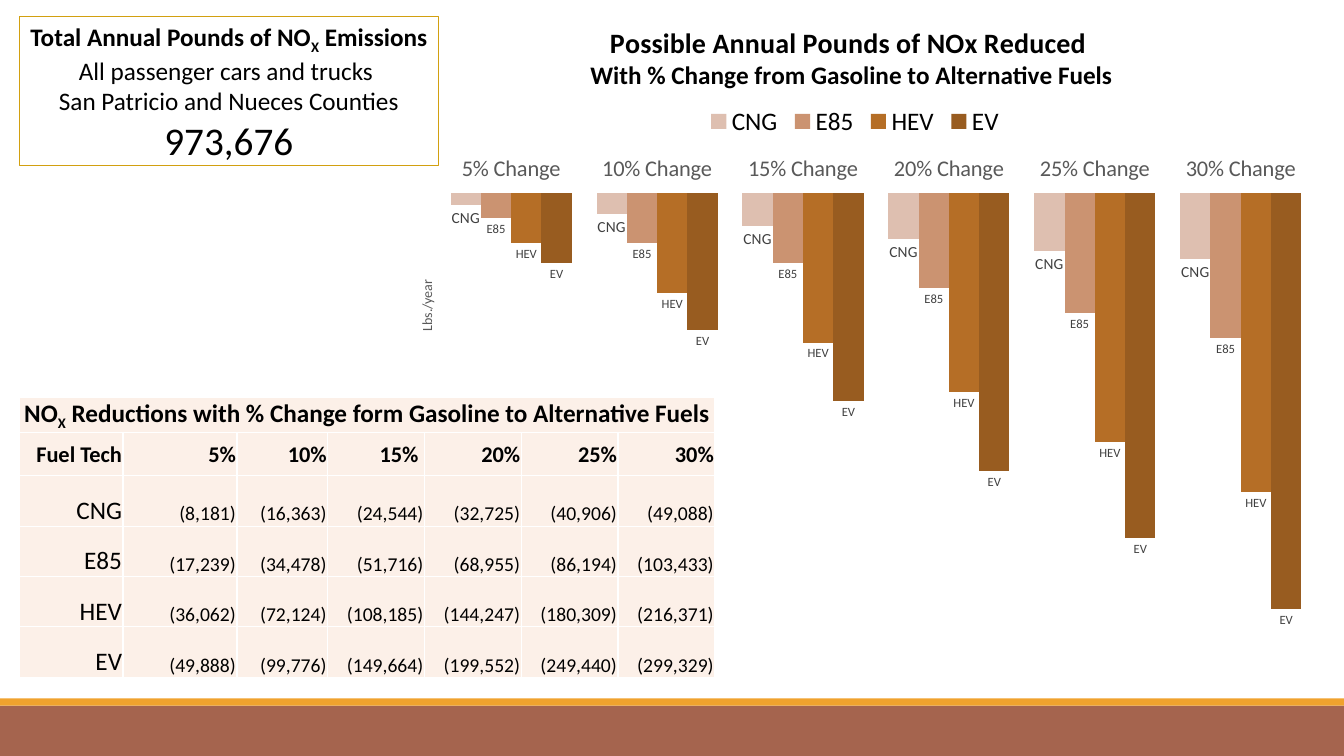
from pptx import Presentation
from pptx.chart.data import CategoryChartData
from pptx.dml.color import RGBColor
from pptx.enum.chart import (XL_CHART_TYPE, XL_LABEL_POSITION, XL_LEGEND_POSITION,
                             XL_TICK_LABEL_POSITION, XL_TICK_MARK)
from pptx.enum.shapes import MSO_SHAPE
from pptx.enum.text import MSO_ANCHOR, PP_ALIGN
from pptx.oxml import parse_xml
from pptx.oxml.ns import nsdecls, qn
from pptx.util import Inches, Pt

BLACK = RGBColor(0x00, 0x00, 0x00)
GRAY = RGBColor(0x59, 0x59, 0x59)
DARK = RGBColor(0x40, 0x40, 0x40)
BROWN = RGBColor(0xA5, 0x64, 0x4E)
ORANGE = RGBColor(0xF0, 0xA2, 0x2E)
GOLD = RGBColor(0xD2, 0xA0, 0x10)
CREAM = RGBColor(0xFC, 0xF0, 0xE8)
FONT = "Calibri"

LEVELS = [5, 10, 15, 20, 25, 30]
# Fuel: bar colour, label size, bar values, pounds reduced
FUELS = {
    "CNG": (RGBColor(0xDE, 0xBF, 0xB0), 11, [-3, -5, -8, -11, -14, -16],
            [8181, 16363, 24544, 32725, 40906, 49088]),
    "E85": (RGBColor(0xCB, 0x93, 0x71), 9, [-6, -12, -17, -23, -29, -35],
            [17239, 34478, 51716, 68955, 86194, 103433]),
    "HEV": (RGBColor(0xB5, 0x6E, 0x26), 9, [-12, -24, -36, -48, -60, -72],
            [36062, 72124, 108185, 144247, 180309, 216371]),
    "EV": (RGBColor(0x98, 0x5C, 0x20), 9, [-17, -33, -50, -67, -83, -100],
           [49888, 99776, 149664, 199552, 249440, 299329]),
}


def set_font(font, size, color=BLACK, bold=False):
    font.name, font.size, font.bold = FONT, Pt(size), bold
    font.color.rgb = color


def add_run(para, text, size, bold=False, color=BLACK, sub=False):
    run = para.add_run()
    run.text = text
    set_font(run.font, size, color, bold)
    if sub:
        run._r.get_or_add_rPr().set("baseline", "-25000")


def add_rect(slide, left, top, width, height, fill=None, line=None):
    rect = slide.shapes.add_shape(MSO_SHAPE.RECTANGLE, Inches(left), Inches(top),
                                  Inches(width), Inches(height))
    rect.shadow.inherit = False
    if fill is None:
        rect.fill.background()
    else:
        rect.fill.solid()
        rect.fill.fore_color.rgb = fill
    if line is None:
        rect.line.fill.background()
    else:
        rect.line.color.rgb = line
        rect.line.width = Pt(0.75)
    return rect


def place(part, lead, **spots):
    """Fix a chart part at fractions of the chart, after its lead element."""
    for old in part.findall(qn("c:layout")):
        part.remove(old)
    inner = '<c:layoutTarget val="inner"/>' if lead is None else ""
    modes = "".join(f'<c:{key}Mode val="edge"/>' for key in "xy")
    sizes = "".join(f'<c:{key} val="{val}"/>' for key, val in spots.items())
    layout = parse_xml(f'<c:layout {nsdecls("c")}><c:manualLayout>{inner}{modes}{sizes}'
                       '</c:manualLayout></c:layout>')
    if lead is None:
        part.insert(0, layout)
    else:
        part.find(qn(lead)).addnext(layout)


def style_axes(chart):
    cats = chart.category_axis
    cats.tick_label_position = XL_TICK_LABEL_POSITION.HIGH
    cats.major_tick_mark = XL_TICK_MARK.NONE
    cats.format.line.fill.background()
    set_font(cats.tick_labels.font, 16, GRAY)
    vals = chart.value_axis
    vals.minimum_scale, vals.maximum_scale = -120, 0
    vals.has_major_gridlines = False
    vals.visible = False
    title = vals.axis_title
    add_run(title.text_frame.paragraphs[0], "Lbs./year", 10, color=GRAY)
    title.text_frame._txBody.bodyPr.set("rot", "-5400000")
    place(title._element, "c:tx", x=0.04, y=0.4)


def add_bars(slide):
    data = CategoryChartData()
    data.categories = [f"{level}% Change" for level in LEVELS]
    for fuel, (_, _, vals, _) in FUELS.items():
        data.add_series(fuel, vals)
    chart = slide.shapes.add_chart(XL_CHART_TYPE.COLUMN_CLUSTERED, Inches(3.74), Inches(0),
                                   Inches(9.48), Inches(6.88), data).chart
    set_font(chart.font, 10)

    # Title and legend
    chart.has_title = True
    frame = chart.chart_title.text_frame
    add_run(frame.paragraphs[0], "Possible Annual Pounds of NOx Reduced ", 20, True)
    add_run(frame.add_paragraph(), "With % Change from Gasoline to Alternative Fuels", 18, True)
    place(chart.chart_title._element, "c:tx", x=0.22, y=0.03)
    chart.has_legend = True
    chart.legend.position = XL_LEGEND_POSITION.TOP
    chart.legend.include_in_layout = False
    set_font(chart.legend.font, 18)
    place(chart.legend._element, "c:legendPos", x=0.34, y=0.15, w=0.32, h=0.05)

    # Bars and their labels
    plot = chart.plots[0]
    plot.gap_width, plot.overlap, plot.vary_by_categories = 82, 0, False
    for bars, (color, size, _, _) in zip(plot.series, FUELS.values()):
        bars.invert_if_negative = False
        bars.format.fill.solid()
        bars.format.fill.fore_color.rgb = color
        labels = bars.data_labels
        labels.show_series_name, labels.show_value = True, False
        labels.position = XL_LABEL_POSITION.OUTSIDE_END
        set_font(labels.font, size, DARK)
    style_axes(chart)
    place(chart._chartSpace.chart.plotArea, None, x=0.064, y=0.278, w=0.916, h=0.72)


def fill_cell(cell, runs, align=PP_ALIGN.RIGHT, anchor=MSO_ANCHOR.BOTTOM):
    """Each run is its text, size, bold and, if wanted, further settings."""
    cell.fill.solid()
    cell.fill.fore_color.rgb = CREAM
    cell.margin_left = cell.margin_right = cell.margin_top = Inches(0.01)
    cell.margin_bottom = 0
    cell.vertical_anchor = anchor
    para = cell.text_frame.paragraphs[0]
    para.alignment = align
    for text, size, bold, *more in runs:
        add_run(para, text, size, bold, *more)
    props = cell._tc.get_or_add_tcPr()
    for spot, side in enumerate(("lnL", "lnR", "lnT", "lnB")):
        props.insert(spot, parse_xml(
            f'<a:{side} {nsdecls("a")} w="12700"><a:solidFill><a:srgbClr val="FFFFFF"/>'
            f'</a:solidFill></a:{side}>'))


def add_grid(slide):
    widths = [1.03, 1.13, 0.9] + [0.96] * 4
    heights = [0.33, 0.43] + [0.5] * 4
    grid = slide.shapes.add_table(len(heights), len(widths), Inches(0.19), Inches(3.94),
                                  Inches(sum(widths)), Inches(sum(heights))).table
    for col, width in zip(grid.columns, widths):
        col.width = Inches(width)
    for row, height in zip(grid.rows, heights):
        row.height = Inches(height)

    # Caption and header rows
    grid.cell(0, 0).merge(grid.cell(0, len(widths) - 1))
    fill_cell(grid.cell(0, 0), [
        ("NO", 18, True), ("X", 18, True, BLACK, True),
        (" Reductions with % Change form Gasoline to Alternative Fuels", 18, True)],
        PP_ALIGN.CENTER)
    heads = ["Fuel Tech"] + [f"{level}% " if level == 15 else f"{level}%" for level in LEVELS]
    for col, head in enumerate(heads):
        fill_cell(grid.cell(1, col), [(head, 16, True)], anchor=MSO_ANCHOR.MIDDLE)

    # One row per fuel
    for row, (fuel, (_, _, _, pounds)) in enumerate(FUELS.items(), 2):
        fill_cell(grid.cell(row, 0), [(fuel, 18, False)])
        for col, cut in enumerate(pounds, 1):
            fill_cell(grid.cell(row, col), [(f"({cut:,})", 14, False)])


def add_total(slide):
    frame = add_rect(slide, 0.19, 0.16, 4.16, 1.48, line=GOLD).text_frame
    frame.word_wrap = True
    frame.vertical_anchor = MSO_ANCHOR.TOP
    first, second, third = frame.paragraphs[0], frame.add_paragraph(), frame.add_paragraph()
    add_run(first, "Total Annual Pounds of NO", 18, True)
    add_run(first, "X", 18, True, sub=True)
    add_run(first, " Emissions ", 18, True)
    add_run(first, "All passenger cars and trucks ", 18)
    add_run(second, "San Patricio and Nueces Counties", 18)
    add_run(third, "973,676", 28)
    for para in frame.paragraphs:
        para.alignment = PP_ALIGN.CENTER


def main():
    deck = Presentation()
    deck.slide_width, deck.slide_height = Inches(13.33), Inches(7.5)
    slide = deck.slides.add_slide(deck.slide_layouts[6])
    # Footer bands
    add_rect(slide, 0, 7, 13.33, 0.5, BROWN)
    add_rect(slide, 0, 6.93, 13.33, 0.07, ORANGE)
    add_bars(slide)
    add_grid(slide)
    add_total(slide)
    deck.save("out.pptx")


if __name__ == "__main__":
    main()
